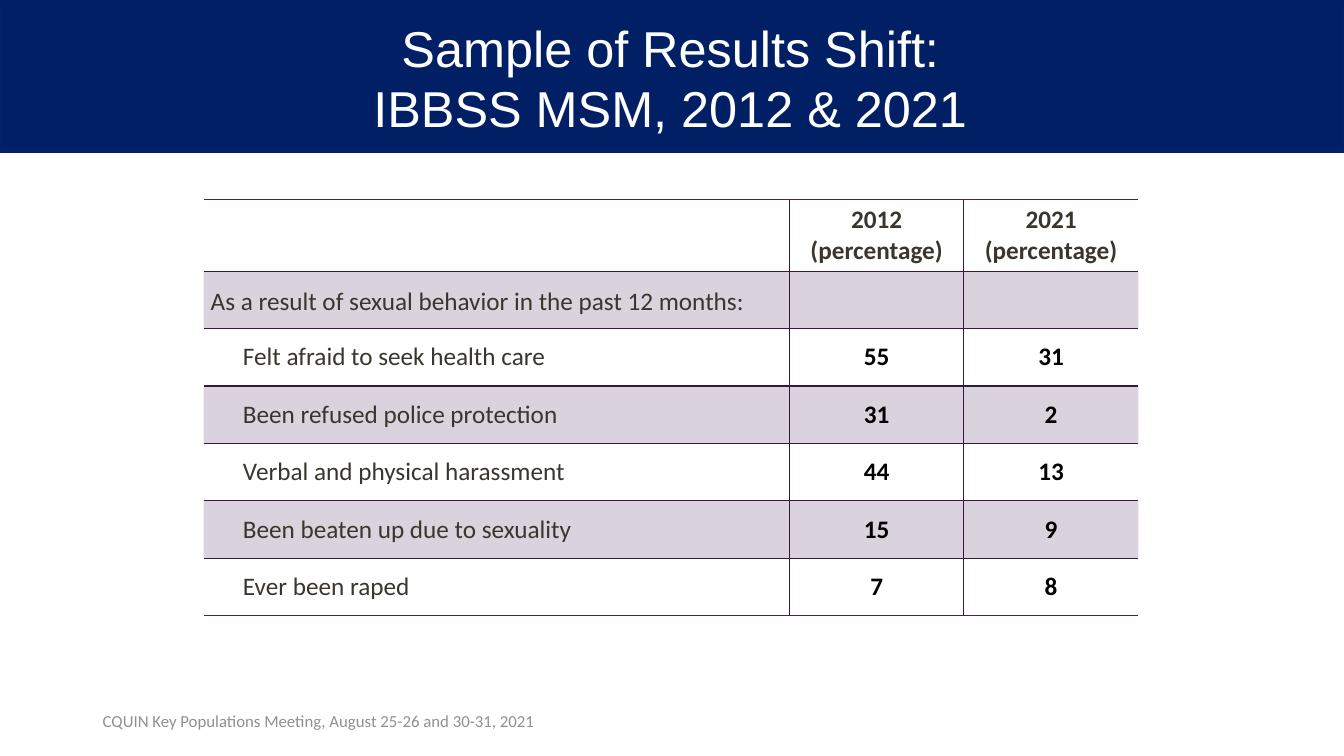
import pptx
import pptx.dml.color
import pptx.enum.shapes
import pptx.enum.text
import pptx.oxml.ns
import pptx.util
import lxml.etree

Inches = pptx.util.Inches
Pt = pptx.util.Pt
CENTER = pptx.enum.text.PP_ALIGN.CENTER
LEFT = pptx.enum.text.PP_ALIGN.LEFT
MIDDLE = pptx.enum.text.MSO_ANCHOR.MIDDLE
TOP = pptx.enum.text.MSO_ANCHOR.TOP
qn = pptx.oxml.ns.qn


def color(hex_value):
    return pptx.dml.color.RGBColor.from_string(hex_value)


class SlideBuilder:
    navy, navy_edge = "001F64", "022169"
    plum, plum_dark = "4A2256", "371940"
    ink, black, gray, white = "3B352F", "000000", "92908F", "FFFFFF"
    heading_font, body_font = "Arial", "Calibri"

    def __init__(self, presentation):
        self.slide = presentation.slides.add_slide(presentation.slide_layouts[5])

    def place(self, shape, left, top, width, height):
        shape.left, shape.top = Inches(left), Inches(top)
        shape.width, shape.height = Inches(width), Inches(height)

    def set_text(self, frame, text, font, size, hex_value, bold=False, align=LEFT):
        frame.text = text
        for paragraph in frame.paragraphs:
            paragraph.alignment = align
            for style in [paragraph.font] + [run.font for run in paragraph.runs]:
                style.name, style.size, style.bold = font, Pt(size), bold
                style.color.rgb = color(hex_value)

    def band(self, left, top, width, height):
        band = self.slide.shapes.add_shape(
            pptx.enum.shapes.MSO_SHAPE.RECTANGLE,
            Inches(left), Inches(top), Inches(width), Inches(height))
        band.shadow.inherit = False
        band.fill.solid()
        band.fill.fore_color.rgb = color(self.navy)
        band.line.color.rgb = color(self.navy_edge)
        band.line.width = Pt(2)
        self.slide.shapes._spTree.insert(2, band._element)

    def title(self, text, *box):
        heading = self.slide.shapes.title
        self.place(heading, *box)
        frame = heading.text_frame
        frame.auto_size = pptx.enum.text.MSO_AUTO_SIZE.NONE
        frame.vertical_anchor = MIDDLE
        self.set_text(frame, text, self.heading_font, 36, self.white, align=CENTER)

    def footer(self, text, left, top, width, height):
        frame = self.slide.shapes.add_textbox(
            Inches(left), Inches(top), Inches(width), Inches(height)).text_frame
        frame.word_wrap = True
        frame.vertical_anchor = MIDDLE
        self.set_text(frame, text, self.body_font, 12, self.gray)

    def borders(self, cell, sides):
        properties = cell._tc.get_or_add_tcPr()
        for index, (side, hex_value) in enumerate(sides.items()):
            line = lxml.etree.Element(qn("a:ln" + side), w=str(Pt(1)))
            if hex_value:
                solid = lxml.etree.SubElement(line, qn("a:solidFill"))
                lxml.etree.SubElement(solid, qn("a:srgbClr"), val=hex_value)
            else:
                lxml.etree.SubElement(line, qn("a:noFill"))
            properties.insert(index, line)

    def shade(self, cell, shaded):
        if not shaded:
            cell.fill.background()
            return
        cell.fill.solid()
        cell.fill.fore_color.rgb = color(self.plum)
        tint = cell._tc.tcPr.find(".//" + qn("a:srgbClr"))
        lxml.etree.SubElement(tint, qn("a:alpha"), val="20000")

    def table(self, rows, left, top, widths, heights):
        table = self.slide.shapes.add_table(
            len(rows), len(widths), Inches(left), Inches(top),
            Inches(sum(widths)), Inches(sum(heights))).table
        table.first_row = table.horz_banding = False
        for column, width in zip(table.columns, widths):
            column.width = Inches(width)
        for row, height in zip(table.rows, heights):
            row.height = Inches(height)
        last_row, last_column = len(rows) - 1, len(widths) - 1
        for r, row in enumerate(rows):
            for c, text in enumerate(row):
                cell = table.cell(r, c)
                header, label = r == 0, c == 0
                self.set_text(cell.text_frame, text, self.body_font, 18,
                              self.ink if header or label else self.black,
                              bold=not label, align=LEFT if label else CENTER)
                cell.vertical_anchor = TOP if header else MIDDLE
                if not header:
                    cell.margin_top = cell.margin_bottom = 0
                    cell.margin_left = cell.margin_right = 0
                    if label:
                        cell.margin_left = Inches(0.07 if r == 1 else 0.39)
                self.shade(cell, r % 2 == 1)
                self.borders(cell, {
                    "L": None if label else self.plum_dark,
                    "R": None if c == last_column else self.plum_dark,
                    "T": self.plum if header else self.plum_dark,
                    "B": self.plum if r == last_row else self.plum_dark})
        lead_in = table.cell(1, 0).text_frame.paragraphs[0]
        lead_in.line_spacing = 1.15
        lead_in.space_after = Pt(10)


def main():
    presentation = pptx.Presentation()
    presentation.slide_width = Inches(13.33)
    presentation.slide_height = Inches(7.5)
    builder = SlideBuilder(presentation)
    builder.band(0, 0, 13.33, 1.5)
    builder.title("Sample of Results Shift:\vIBBSS MSM, 2012 & 2021",
                  0.9, 0.35, 11.5, 0.83)
    results = [
        ("", "2012\n(percentage)", "2021\n(percentage)"),
        ("As a result of sexual behavior in the past 12 months:", "", ""),
        ("Felt afraid to seek health care", "55", "31"),
        ("Been refused police protection", "31", "2"),
        ("Verbal and physical harassment", "44", "13"),
        ("Been beaten up due to sexuality", "15", "9"),
        ("Ever been raped", "7", "8"),
    ]
    builder.table(results, 2.02, 1.98, [5.81, 1.73, 1.73], [0.71] + [0.57] * 6)
    builder.footer("CQUIN Key Populations Meeting, August 25-26 and 30-31, 2021",
                   0.92, 6.95, 5.21, 0.4)
    presentation.save("out.pptx")


if __name__ == "__main__":
    main()
